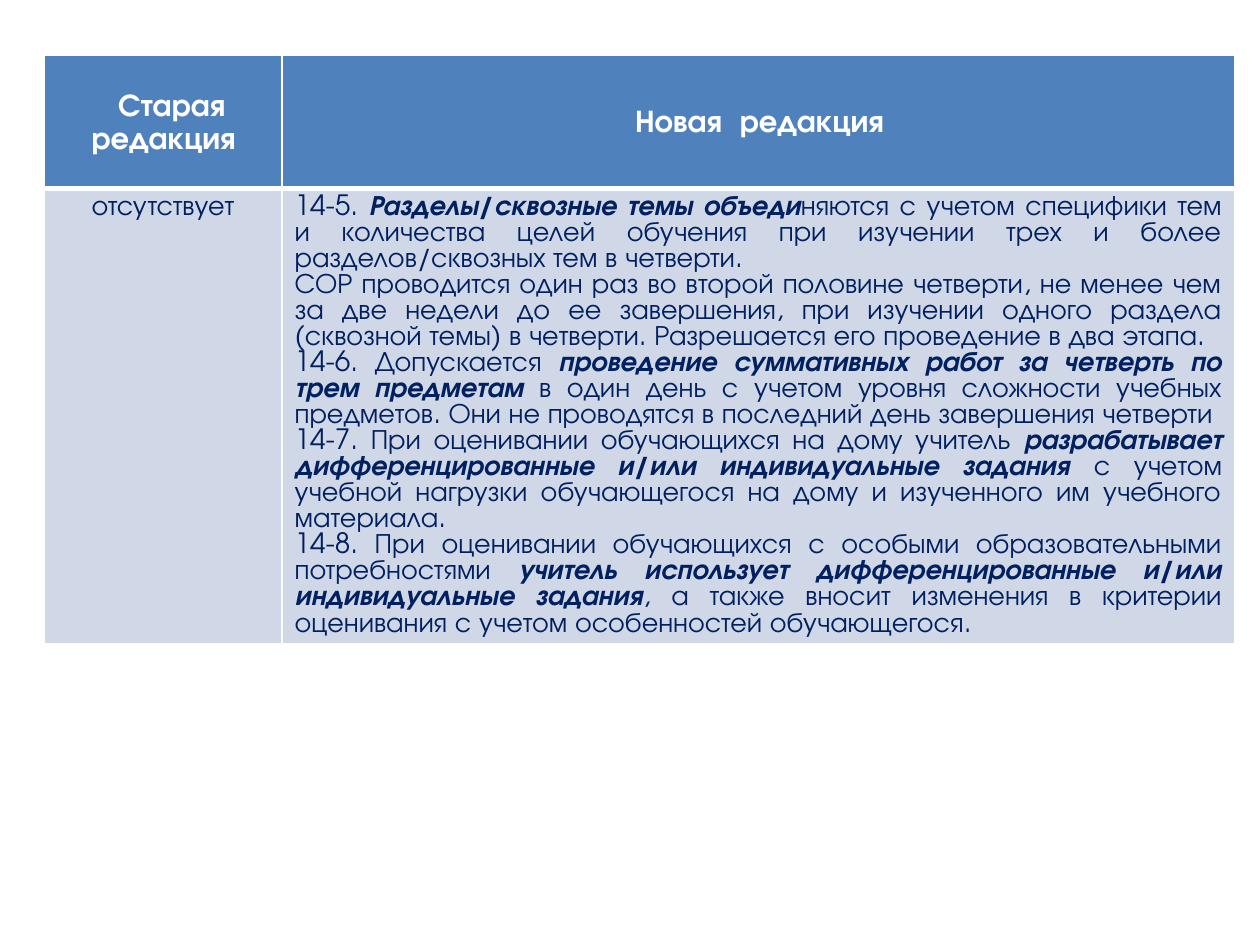
from pptx import Presentation
from pptx.dml.color import RGBColor
from pptx.enum.text import MSO_ANCHOR, PP_ALIGN
from pptx.oxml.ns import qn
from pptx.util import Pt
from lxml import etree

CENTER, JUSTIFY = PP_ALIGN.CENTER, PP_ALIGN.JUSTIFY
MIDDLE, TOP = MSO_ANCHOR.MIDDLE, MSO_ANCHOR.TOP
BLUE, PALE, NAVY, WHITE = "4F81BD", "D0D8E8", "002060", "FFFFFF"

HEADS = [("Старая  редакция", 0.72, 14.4), ("Новая  редакция", 1.44, 0)]
OLD = [[(" отсутствует ", False)]]
NEW = [
    [("14-5. ", False),
     ("Разделы/сквозные темы объеди", True),
     ("няются с учетом специфики тем и количества целей обучения при изучении "
      "трех и более разделов/сквозных тем в четверти.", False)],
    [("СОР проводится один раз во второй половине четверти, не менее чем за две "
      "недели до ее завершения, при изучении одного раздела (сквозной темы) в "
      "четверти. Разрешается его проведение в два этапа.", False)],
    [("14-6. Допускается ", False),
     ("проведение суммативных работ за четверть по трем предметам ", True),
     ("в один день с учетом уровня сложности учебных предметов. Они не "
      "проводятся в последний день завершения четверти", False)],
    [("14-7. При оценивании обучающихся на дому учитель ", False),
     ("разрабатывает дифференцированные и/или индивидуальные задания ", True),
     ("с учетом учебной нагрузки обучающегося на дому и изученного им учебного "
      "материала.", False)],
    [("14-8. При оценивании обучающихся с особыми образовательными "
      "потребностями ", False),
     ("учитель использует дифференцированные и/или индивидуальные задания", True),
     (", а также вносит изменения в критерии оценивания с учетом особенностей "
      "обучающегося.", False)],
]


def color(code):
    return RGBColor.from_string(code)


class Deck:
    font = "TeX Gyre Adventor"

    def __init__(self, wide, high):
        self.file = Presentation()
        self.file.slide_width, self.file.slide_height = Pt(wide), Pt(high)
        self.slide = self.file.slides.add_slide(self.file.slide_layouts[6])

    def table(self, left, top, cols, rows):
        grid = self.slide.shapes.add_table(
            len(rows), len(cols), Pt(left), Pt(top), Pt(sum(cols)), Pt(sum(rows))).table
        grid.first_row = grid.horz_banding = False
        for col, size in zip(grid.columns, cols):
            col.width = Pt(size)
        for row, size in zip(grid.rows, rows):
            row.height = Pt(size)
        return grid

    def paint(self, cell, fill, anchor, inset, lines):
        cell.fill.solid()
        cell.fill.fore_color.rgb = color(fill)
        cell.vertical_anchor = anchor
        cell.margin_left = cell.margin_right = Pt(inset[0])
        cell.margin_top = cell.margin_bottom = Pt(inset[1])
        props = cell._tc.get_or_add_tcPr()
        for spot, (side, size) in enumerate(lines.items()):
            line = etree.Element(qn("a:ln" + side), w=str(Pt(size)))
            solid = etree.SubElement(line, qn("a:solidFill"))
            etree.SubElement(solid, qn("a:srgbClr"), val=WHITE)
            props.insert(spot, line)

    def run(self, para, text, size, ink, bold, slant):
        run = para.add_run()
        run.text = text
        font = run.font
        font.name, font.size = self.font, Pt(size)
        font.bold, font.italic = bold, slant
        font.color.rgb = color(ink)

    def head(self, cell, text, margin, indent):
        self.paint(cell, BLUE, MIDDLE, (5.04, 0), {"L": 1, "R": 1, "T": 1, "B": 3})
        para = cell.text_frame.paragraphs[0]
        para.alignment, para.line_spacing = CENTER, 1.15
        props = para._p.get_or_add_pPr()
        props.set("marL", str(Pt(margin)))
        props.set("indent", str(Pt(indent)))
        self.run(para, text, 18, WHITE, True, False)

    def body(self, cell, paras, align):
        self.paint(cell, PALE, TOP, (7.2, 3.6), {"L": 1, "R": 1, "T": 3, "B": 1})
        frame = cell.text_frame
        for spot, runs in enumerate(paras):
            para = frame.add_paragraph() if spot else frame.paragraphs[0]
            para.alignment = align
            for text, strong in runs:
                self.run(para, text, 16, NAVY, strong, strong)


def main():
    deck = Deck(720, 540)
    grid = deck.table(25.2, 31.7, [136, 544.4], [76, 260])
    for col, (text, margin, indent) in enumerate(HEADS):
        deck.head(grid.cell(0, col), text, margin, indent)
    deck.body(grid.cell(1, 0), OLD, CENTER)
    deck.body(grid.cell(1, 1), NEW, JUSTIFY)
    deck.file.save("out.pptx")


if __name__ == "__main__":
    main()
